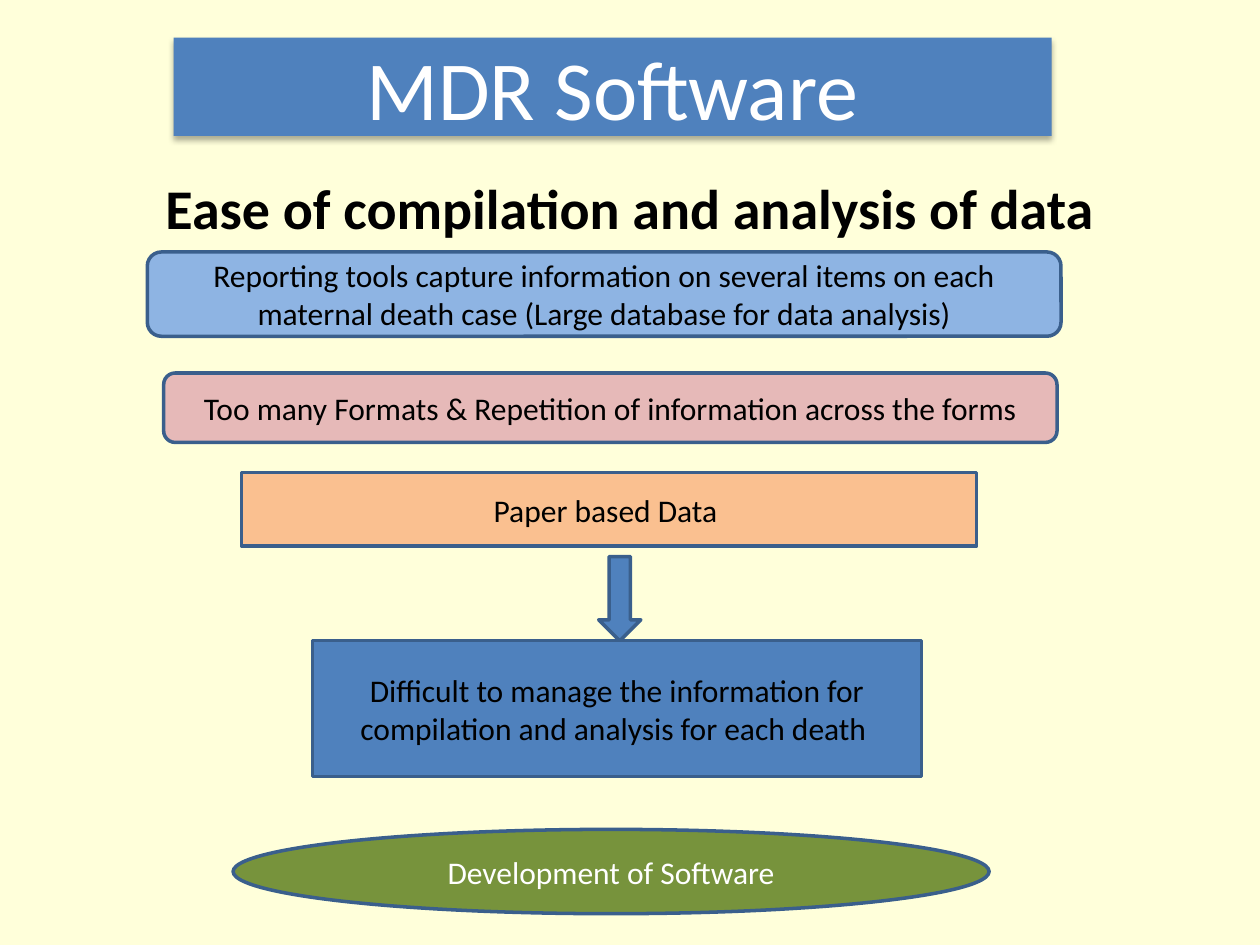
import pptx
import pptx.util
import pptx.dml.color
import pptx.enum.shapes
import pptx.enum.text
import pptx.oxml
import pptx.oxml.ns

Cm = pptx.util.Cm
Pt = pptx.util.Pt
Kind = pptx.enum.shapes.MSO_SHAPE

hues = {
    "page": "FFFFDA",
    "blue": "4F81BD",
    "sky": "8EB4E3",
    "rose": "E6B9B8",
    "peach": "FAC090",
    "green": "77933C",
    "edge": "3A5F8C",
    "black": "000000",
    "white": "FFFFFF",
}


def paint(fill, hue):
    fill.solid()
    fill.fore_color.rgb = pptx.dml.color.RGBColor.from_string(hues[hue])


def write(shape, text, size, hue, bold=False):
    frame = shape.text_frame
    frame.word_wrap = True
    para = frame.paragraphs[0]
    para.alignment = pptx.enum.text.PP_ALIGN.CENTER
    run = para.add_run()
    run.text = text
    run.font.name = "Calibri"
    run.font.size = Pt(size)
    run.font.bold = bold
    paint(run.font.fill, hue)
    return para


deck = pptx.Presentation()
deck.slide_width, deck.slide_height = Cm(25.4), Cm(19.05)
slide = deck.slides.add_slide(deck.slide_layouts[1])
paint(slide.background.fill, "page")

title = slide.shapes.title
title.left, title.top, title.width, title.height = Cm(3.5), Cm(0.76), Cm(17.7), Cm(1.98)
paint(title.fill, "blue")
title.text_frame.vertical_anchor = pptx.enum.text.MSO_ANCHOR.MIDDLE
write(title, "MDR Software", 48, "white")
shade = pptx.oxml.parse_xml(
    f'<a:effectLst {pptx.oxml.ns.nsdecls("a")}>'
    f'<a:outerShdw blurRad="{Pt(3.5)}" dist="{Pt(2.2)}" dir="5400000" rotWithShape="0">'
    '<a:srgbClr val="000000"><a:alpha val="32000"/></a:srgbClr>'
    '</a:outerShdw></a:effectLst>'
)
title.element.spPr.append(shade)

body = slide.placeholders[1]
body.left, body.top, body.width, body.height = Cm(1.27), Cm(3.38), Cm(22.86), Cm(13.64)
para = write(body, "Ease of compilation and analysis of data", 32, "black", True)
props = para._p.get_or_add_pPr()
props.set("marL", str(Cm(0.95)))
props.set("indent", str(-Cm(0.95)))
props.append(pptx.oxml.parse_xml(f'<a:buNone {pptx.oxml.ns.nsdecls("a")}/>'))

steps = [
    (Kind.ROUNDED_RECTANGLE, 2.97, 5.08, 18.42, 1.7, "sky", "black",
     "Reporting tools capture information on several items on each "
     "maternal death case (Large database for data analysis)"),
    (Kind.ROUNDED_RECTANGLE, 3.3, 7.52, 18.01, 1.4, "rose", "black",
     "Too many Formats & Repetition of information across the forms"),
    (Kind.DOWN_ARROW, 12.07, 11.22, 0.85, 1.7, "blue", "white", ""),
    (Kind.RECTANGLE, 6.3, 12.91, 12.28, 2.75, "blue", "black",
     "Difficult to manage the information for "
     "compilation and analysis for each death "),
    (Kind.RECTANGLE, 4.87, 9.53, 14.82, 1.48, "peach", "black", "Paper based Data "),
    (Kind.OVAL, 4.7, 16.72, 15.24, 1.7, "green", "white", "Development of Software"),
]
for kind, left, top, wide, high, hue, ink, text in steps:
    shape = slide.shapes.add_shape(kind, Cm(left), Cm(top), Cm(wide), Cm(high))
    shape.shadow.inherit = False
    paint(shape.fill, hue)
    paint(shape.line.fill, "edge")
    shape.line.width = Pt(2)
    if text:
        shape.text_frame.vertical_anchor = pptx.enum.text.MSO_ANCHOR.MIDDLE
        write(shape, text, 18, ink)

deck.save("out.pptx")
